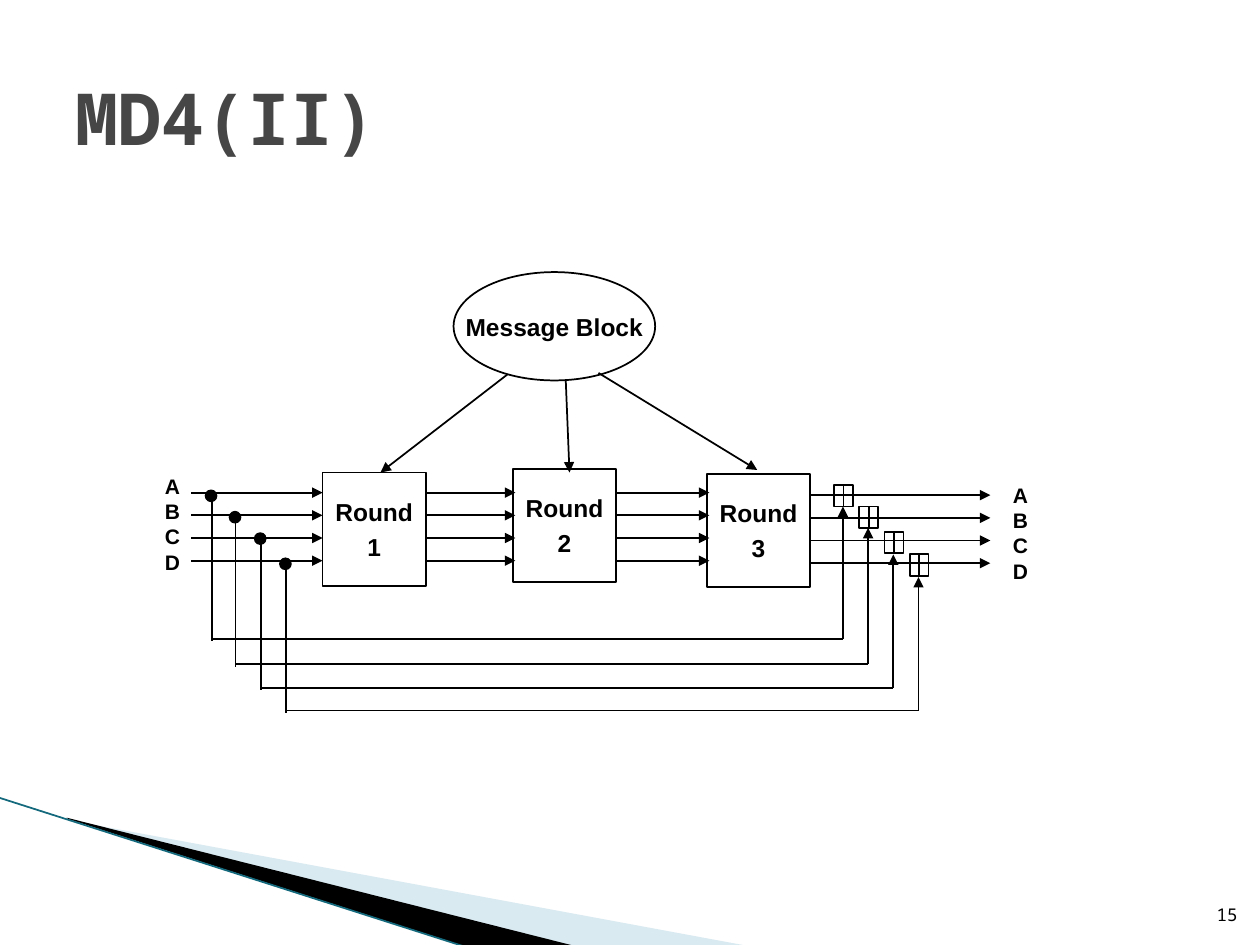
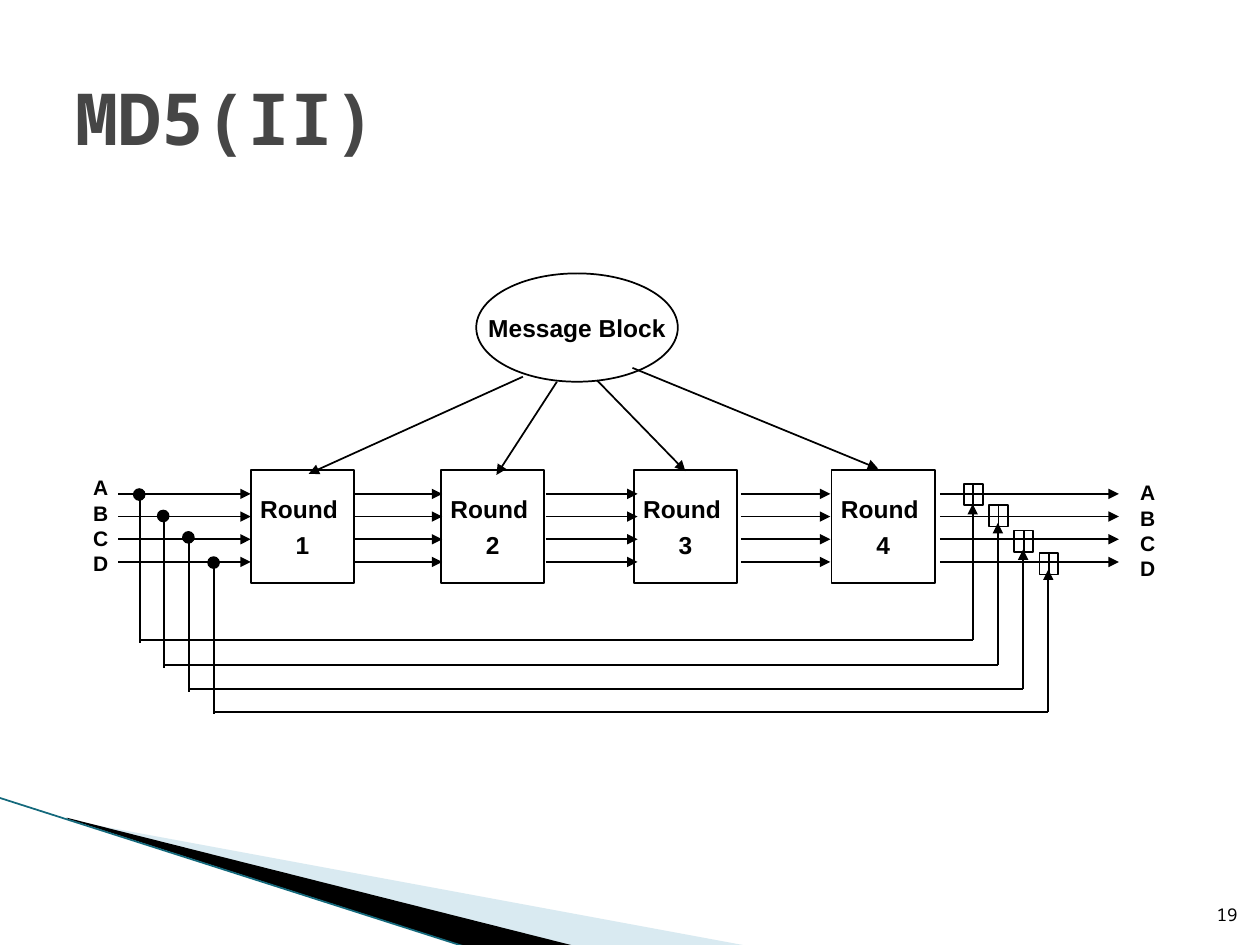
from dataclasses import dataclass

from lxml.etree import SubElement
from pptx import Presentation
from pptx.dml.color import RGBColor
from pptx.enum.shapes import MSO_CONNECTOR, MSO_SHAPE
from pptx.enum.text import MSO_ANCHOR, PP_ALIGN
from pptx.oxml.ns import qn
from pptx.util import Inches, Pt

BLACK = RGBColor(0x00, 0x00, 0x00)
WHITE = RGBColor(0xFF, 0xFF, 0xFF)
TITLE_GRAY = RGBColor(0x46, 0x46, 0x46)
PALE_BLUE = RGBColor(0xA0, 0xCB, 0xDC)
TEAL = RGBColor(0x14, 0x69, 0x7C)

DIAGRAM_FONT = "Arial"
TITLE_FONT = "Noto Sans Mono"

REGISTERS = ["A", "B", "C", "D"]
LANE_GAP = 0.18
ROUND_SIZE = (0.82, 0.9)
ADDER_SIZE = (0.15, 0.17)
DOT_SIZE = (0.09, 0.09)

# Feedback geometry per register, relative to the first stem or adder
STEM_OFFSETS = [0, 0.19, 0.39, 0.59]
STEM_TOPS = [3.91, 4.09, 4.28, 4.43]
DOT_TOPS = [3.89, 4.06, 4.23, 4.43]
RETURN_LEVELS = [5.07, 5.27, 5.46, 5.64]
ADDER_TOPS = [3.85, 4.02, 4.22, 4.4]
ADDER_GAP = 0.2


@dataclass
class HashDiagram:
    title: str
    page: str
    block: tuple          # left, top of the message block
    round_label: str
    rounds: list          # left, top of each round box
    lanes: list           # start x, end x, first y of each bundle
    message_arrows: list  # start and end points
    registers: list       # left, top of the input and output letters
    stem_x: float
    riser_x: float
    riser_tops: list
    shift: float          # vertical shift of the feedback part


MD4 = HashDiagram(
    title="MD4(II)", page="15", block=(3.6, 2.16), round_label="Round",
    rounds=[(2.56, 3.75), (4.07, 3.72), (5.61, 3.76)],
    lanes=[(1.52, 2.56, 3.91), (3.39, 4.09, 3.91), (4.9, 5.63, 3.91), (6.44, 7.86, 3.93)],
    message_arrows=[((4.03, 2.97), (3.02, 3.75)), ((4.49, 3.01), (4.52, 3.75)),
                    ((4.75, 2.96), (6.01, 3.73))],
    registers=[(1.21, 3.71), (7.94, 3.78)],
    stem_x=1.68, riser_x=6.69, riser_tops=[4.02, 4.19, 4.4, 4.58], shift=0)

MD5 = HashDiagram(
    title="MD5(II)", page="19", block=(3.78, 2.17), round_label="Round ",
    rounds=[(1.99, 3.73), (3.5, 3.73), (5.03, 3.73), (6.6, 3.73)],
    lanes=[(0.94, 1.99, 3.92), (2.81, 3.51, 3.92), (4.33, 5.06, 3.92),
           (5.88, 6.59, 3.92), (7.46, 8.88, 3.92)],
    message_arrows=[((4.15, 2.99), (2.45, 3.76)), ((4.42, 3.03), (3.94, 3.77)),
                    ((4.74, 3.02), (5.44, 3.74)), ((5.02, 2.92), (6.97, 3.72))],
    registers=[(0.64, 3.72), (8.95, 3.76)],
    stem_x=1.11, riser_x=7.72, riser_tops=[4, 4.15, 4.36, 4.52], shift=0.01)


class DiagramBuilder:
    """Holds the shared style and the slide being drawn."""

    def __init__(self, presentation):
        self.presentation = presentation
        self.slide = None

    def new_slide(self, title, page):
        self.slide = self.presentation.slides.add_slide(self.presentation.slide_layouts[6])
        pale_band = self.band([(0.55, 6.51), (5.95, 7.51), (4.56, 7.51), (0.55, 6.5)], PALE_BLUE)
        color = pale_band._element.spPr.find(qn("a:solidFill")).find(qn("a:srgbClr"))
        SubElement(color, qn("a:alpha"), val="40000")
        self.band([(0.53, 6.49), (4.57, 7.51), (3.72, 7.52), (0.54, 6.5)], BLACK)
        self.line((-0.01, 6.33), (3.71, 7.52), color=TEAL)
        self.text((9.3, 6.99, 0.62, 0.4), [page], 10, font=TITLE_FONT, bold=False,
                  align=PP_ALIGN.RIGHT, anchor=MSO_ANCHOR.BOTTOM)
        self.text((0.5, 0.3, 9, 1.25), [title], 41, font=TITLE_FONT, color=TITLE_GRAY,
                  anchor=MSO_ANCHOR.MIDDLE)

    def band(self, points, color):
        corners = [(Inches(x), Inches(y)) for x, y in points]
        builder = self.slide.shapes.build_freeform(*corners[0])
        builder.add_line_segments(corners[1:], close=True)
        shape = builder.convert_to_shape()
        shape.shadow.inherit = False
        shape.fill.solid()
        shape.fill.fore_color.rgb = color
        shape.line.fill.background()
        return shape

    def line(self, start, end, arrow=False, color=BLACK):
        connector = self.slide.shapes.add_connector(
            MSO_CONNECTOR.STRAIGHT, *[Inches(value) for value in (*start, *end)])
        connector.line.color.rgb = color
        connector.line.width = Pt(1)
        properties = connector._element.spPr
        if arrow:
            SubElement(properties.find(qn("a:ln")), qn("a:tailEnd"), type="triangle")
        SubElement(properties, qn("a:effectLst"))

    def shape(self, kind, position, size, fill=None, line_width=1):
        shape = self.slide.shapes.add_shape(
            kind, *[Inches(value) for value in (*position, *size)])
        shape.shadow.inherit = False
        if fill is None:
            shape.fill.background()
        else:
            shape.fill.solid()
            shape.fill.fore_color.rgb = fill
        shape.line.color.rgb = BLACK
        shape.line.width = Pt(line_width)
        return shape

    def text(self, box, lines, size, anchor=MSO_ANCHOR.TOP, wrap=True, **style):
        text_box = self.slide.shapes.add_textbox(*[Inches(value) for value in box])
        self.set_text(text_box.text_frame, lines, size, anchor, wrap, **style)

    def set_text(self, text_frame, lines, size, anchor=MSO_ANCHOR.MIDDLE, wrap=False,
                 align=PP_ALIGN.LEFT, font=DIAGRAM_FONT, color=BLACK, bold=True,
                 gap=0, line_spacing=None):
        text_frame.text = "\n".join(lines)
        text_frame.word_wrap = wrap
        text_frame.vertical_anchor = anchor
        for index, paragraph in enumerate(text_frame.paragraphs):
            paragraph.alignment = align
            if line_spacing:
                paragraph.line_spacing = Pt(line_spacing)
            if gap and index:
                paragraph.space_before = Pt(gap)
            for run in paragraph.runs:
                run.font.name = font
                run.font.size = Pt(size)
                run.font.bold = bold
                run.font.color.rgb = color

    def message_block(self, position):
        ellipse = self.shape(MSO_SHAPE.OVAL, position, (1.6, 0.86), WHITE)
        self.set_text(ellipse.text_frame, ["Message Block"], 14, align=PP_ALIGN.CENTER)

    def round_box(self, position, label, number):
        box = self.shape(MSO_SHAPE.RECTANGLE, position, ROUND_SIZE)
        self.set_text(box.text_frame, [label, str(number)], 14, align=PP_ALIGN.CENTER, gap=3.5)

    def register_letters(self, left, top):
        self.text((left, top, 0.32, 0.9), REGISTERS, 12, wrap=False, line_spacing=14.4)

    def lane_bundle(self, start_x, end_x, first_y):
        for lane in range(len(REGISTERS)):
            y = first_y + lane * LANE_GAP
            self.line((start_x, y), (end_x, y), arrow=True)

    def adder(self, left, top):
        width, height = ADDER_SIZE
        self.shape(MSO_SHAPE.RECTANGLE, (left, top), ADDER_SIZE)
        self.line((left + width / 2, top), (left + width / 2, top + height))

    def feedback(self, diagram, lane):
        """Lead one input register around the rounds to its output adder."""
        shift = diagram.shift
        stem_x = diagram.stem_x + STEM_OFFSETS[lane]
        riser_x = diagram.riser_x + lane * ADDER_GAP
        level = RETURN_LEVELS[lane] + shift
        self.line((stem_x, STEM_TOPS[lane] + shift), (stem_x, level + 0.02))
        self.line((stem_x, level), (riser_x, level))
        self.line((riser_x, level), (riser_x, diagram.riser_tops[lane]), arrow=True)
        self.adder(riser_x - 0.07, ADDER_TOPS[lane] - shift)
        self.shape(MSO_SHAPE.FLOWCHART_CONNECTOR,
                   (stem_x - 0.05, DOT_TOPS[lane] - shift), DOT_SIZE, BLACK, 0.75)

    def draw(self, diagram):
        self.new_slide(diagram.title, diagram.page)
        self.message_block(diagram.block)
        for number, position in enumerate(diagram.rounds, start=1):
            self.round_box(position, diagram.round_label, number)
        for bundle in diagram.lanes:
            self.lane_bundle(*bundle)
        for position in diagram.registers:
            self.register_letters(*position)
        for lane in range(len(REGISTERS)):
            self.feedback(diagram, lane)
        for start, end in diagram.message_arrows:
            self.line(start, end, arrow=True)


def main():
    presentation = Presentation()
    presentation.slide_width = Inches(10)
    presentation.slide_height = Inches(7.5)
    builder = DiagramBuilder(presentation)
    for diagram in (MD4, MD5):
        builder.draw(diagram)
    presentation.save("out.pptx")


if __name__ == "__main__":
    main()
